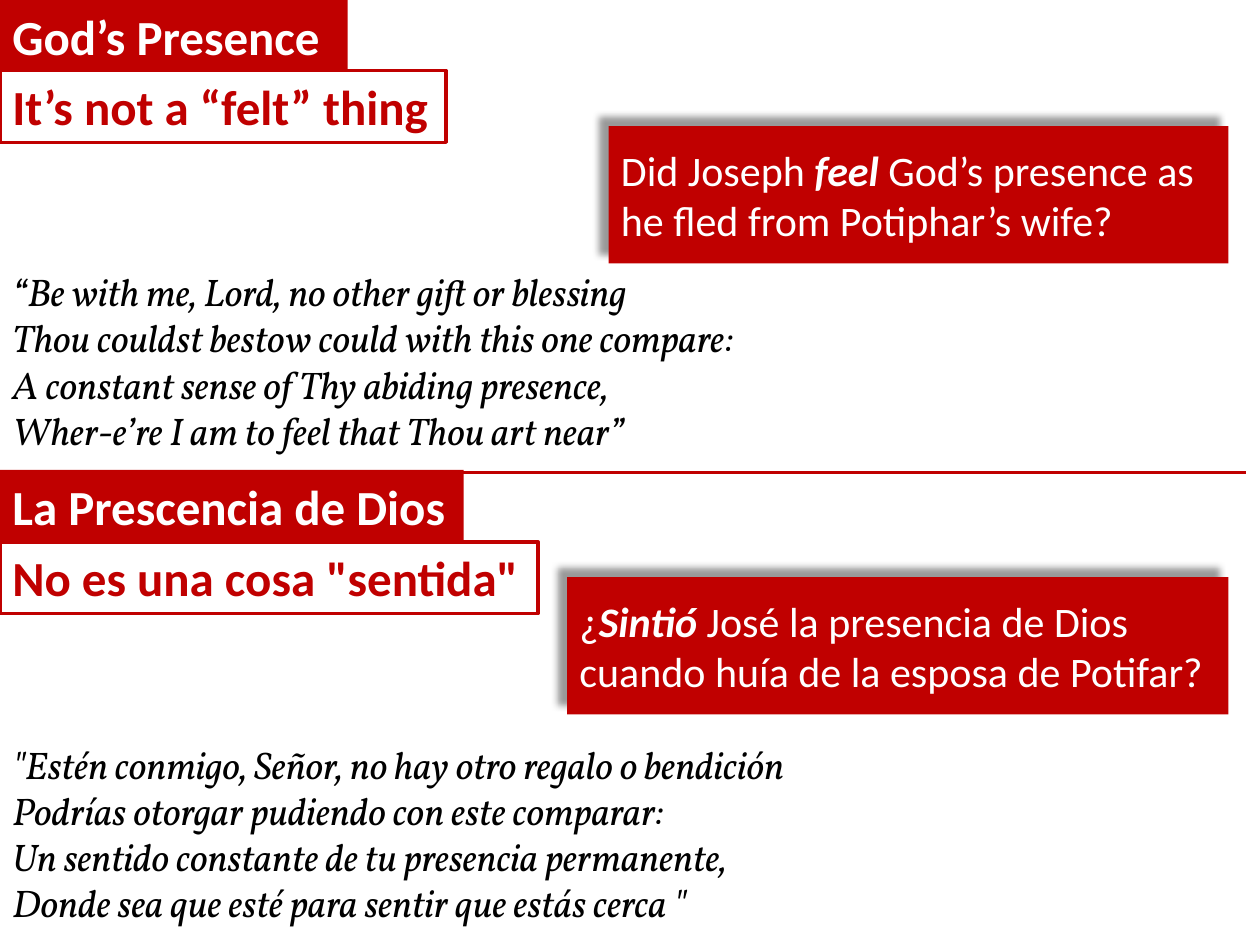
from dataclasses import dataclass
from typing import Optional

from lxml.etree import SubElement
from pptx import Presentation
from pptx.dml.color import RGBColor
from pptx.enum.shapes import MSO_CONNECTOR, MSO_SHAPE
from pptx.enum.text import MSO_ANCHOR, MSO_AUTO_SIZE, PP_ALIGN
from pptx.oxml.ns import qn
from pptx.util import Inches, Pt


@dataclass(frozen=True)
class Theme:
    red: RGBColor = RGBColor(0xC0, 0x00, 0x00)
    white: RGBColor = RGBColor(0xFF, 0xFF, 0xFF)
    black: RGBColor = RGBColor(0x00, 0x00, 0x00)
    sans: str = "Calibri"
    serif: str = "Vollkorn"
    heading: int = 28
    question: int = 24
    verse: int = 22
    line: int = 2


@dataclass(frozen=True)
class Box:
    """Position in grid columns and rows."""
    col: float
    row: float
    cols: float
    rows: float


@dataclass(frozen=True)
class Run:
    text: str
    bold: bool = False
    italic: bool = False


@dataclass(frozen=True)
class Panel:
    """One language's half of the slide."""
    title: str
    title_box: Box
    claim: str
    claim_box: Box
    question: tuple[Run, ...]
    question_box: Box
    verse: tuple[str, ...]
    verse_box: Box


T = Theme()
COLS, ROWS = 100, 75
HEAD_ROWS, QUESTION_ROWS = 5.7, 10.9
QUESTION_RIGHT = 97.5

PANELS = (
    Panel(
        "God’s Presence", Box(0, 0, 27.6, HEAD_ROWS),
        "It’s not a “felt” thing", Box(0, 5.6, 35.4, HEAD_ROWS),
        (Run("Did Joseph "), Run("feel", True, True),
         Run(" God’s presence as he fled from Potiphar’s wife?")),
        Box(48.3, 10, QUESTION_RIGHT - 48.3, QUESTION_ROWS),
        ("“Be with me, Lord, no other gift or blessing",
         "Thou couldst bestow could with this one compare:",
         "A constant sense of Thy abiding presence,",
         "Wher-e’re I am to feel that Thou art near”"),
        Box(0, 20.8, 97.5, 15.8),
    ),
    Panel(
        "La Prescencia de Dios", Box(0, 37.3, 36.8, HEAD_ROWS),
        'No es una cosa "sentida"', Box(0, 43, 42.7, HEAD_ROWS),
        (Run("¿"), Run("Sintió", True, True),
         Run(" José la presencia de Dios cuando huía de la esposa de Potifar?")),
        Box(45, 45.8, QUESTION_RIGHT - 45, QUESTION_ROWS),
        ('"Estén conmigo, Señor, no hay otro regalo o bendición',
         "Podrías otorgar pudiendo con este comparar:",
         "Un sentido constante de tu presencia permanente,",
         'Donde sea que esté para sentir que estás cerca "'),
        Box(0, 58.3, 73.2, 15.9),
    ),
)

prs = Presentation()
prs.slide_width, prs.slide_height = Inches(10), Inches(7.5)
s = prs.slides.add_slide(prs.slide_layouts[6])


def x(col: float) -> int:
    return round(prs.slide_width * col / COLS)


def y(row: float) -> int:
    return round(prs.slide_height * row / ROWS)


def place(box: Box) -> tuple[int, int, int, int]:
    return x(box.col), y(box.row), x(box.cols), y(box.rows)


def add_paragraph(p, runs: tuple[Run, ...], font: str, size: int, color: RGBColor) -> None:
    p.alignment = PP_ALIGN.LEFT
    for run in runs:
        r = p.add_run()
        r.text = run.text
        r.font.name, r.font.size = font, Pt(size)
        r.font.bold, r.font.italic = run.bold, run.italic
        r.font.color.rgb = color


def add_rect(box: Box, fill: RGBColor, line: Optional[RGBColor] = None):
    sp = s.shapes.add_shape(MSO_SHAPE.RECTANGLE, *place(box))
    sp.shadow.inherit = False
    sp.fill.solid()
    sp.fill.fore_color.rgb = fill
    if line is None:
        sp.line.fill.background()
    else:
        sp.line.color.rgb = line
        sp.line.width = Pt(T.line)
    return sp


def add_heading(text: str, box: Box, fill: RGBColor, color: RGBColor,
                line: Optional[RGBColor] = None) -> None:
    tf = add_rect(box, fill, line).text_frame
    tf.word_wrap = False
    tf.auto_size = MSO_AUTO_SIZE.SHAPE_TO_FIT_TEXT
    tf.vertical_anchor = MSO_ANCHOR.TOP
    add_paragraph(tf.paragraphs[0], (Run(text, bold=True),), T.sans, T.heading, color)


def add_shadow(sp) -> None:
    """Cast a soft shadow up and to the left."""
    effects = sp._element.spPr.find(qn("a:effectLst"))
    shadow = SubElement(effects, qn("a:outerShdw"), blurRad=str(Pt(4)), dist=str(Pt(8)),
                        dir=str(225 * 60000), algn="br", rotWithShape="0")
    color = SubElement(shadow, qn("a:srgbClr"), val=str(T.black))
    SubElement(color, qn("a:alpha"), val="40000")


def add_question(runs: tuple[Run, ...], box: Box) -> None:
    sp = add_rect(box, T.red)
    add_shadow(sp)
    tf = sp.text_frame
    tf.word_wrap = True
    tf.vertical_anchor = MSO_ANCHOR.MIDDLE
    add_paragraph(tf.paragraphs[0], runs, T.sans, T.question, T.white)


def add_verse(lines: tuple[str, ...], box: Box) -> None:
    tf = s.shapes.add_textbox(*place(box)).text_frame
    tf.word_wrap = True
    tf.auto_size = MSO_AUTO_SIZE.SHAPE_TO_FIT_TEXT
    for i, text in enumerate(lines):
        p = tf.add_paragraph() if i else tf.paragraphs[0]
        add_paragraph(p, (Run(text, italic=True),), T.serif, T.verse, T.black)


def add_divider(start: float, end: float, row: float) -> None:
    line = s.shapes.add_connector(MSO_CONNECTOR.STRAIGHT, x(start), y(row), x(end), y(row))
    line.line.color.rgb = T.red
    line.line.width = Pt(T.line)
    SubElement(line._element.spPr, qn("a:effectLst"))


def add_panel(panel: Panel) -> None:
    add_heading(panel.title, panel.title_box, T.red, T.white)
    add_heading(panel.claim, panel.claim_box, T.white, T.red, T.red)
    add_question(panel.question, panel.question_box)
    add_verse(panel.verse, panel.verse_box)


add_divider(1.4, 98.9, ROWS / 2)
for panel in PANELS:
    add_panel(panel)
prs.save("out.pptx")
